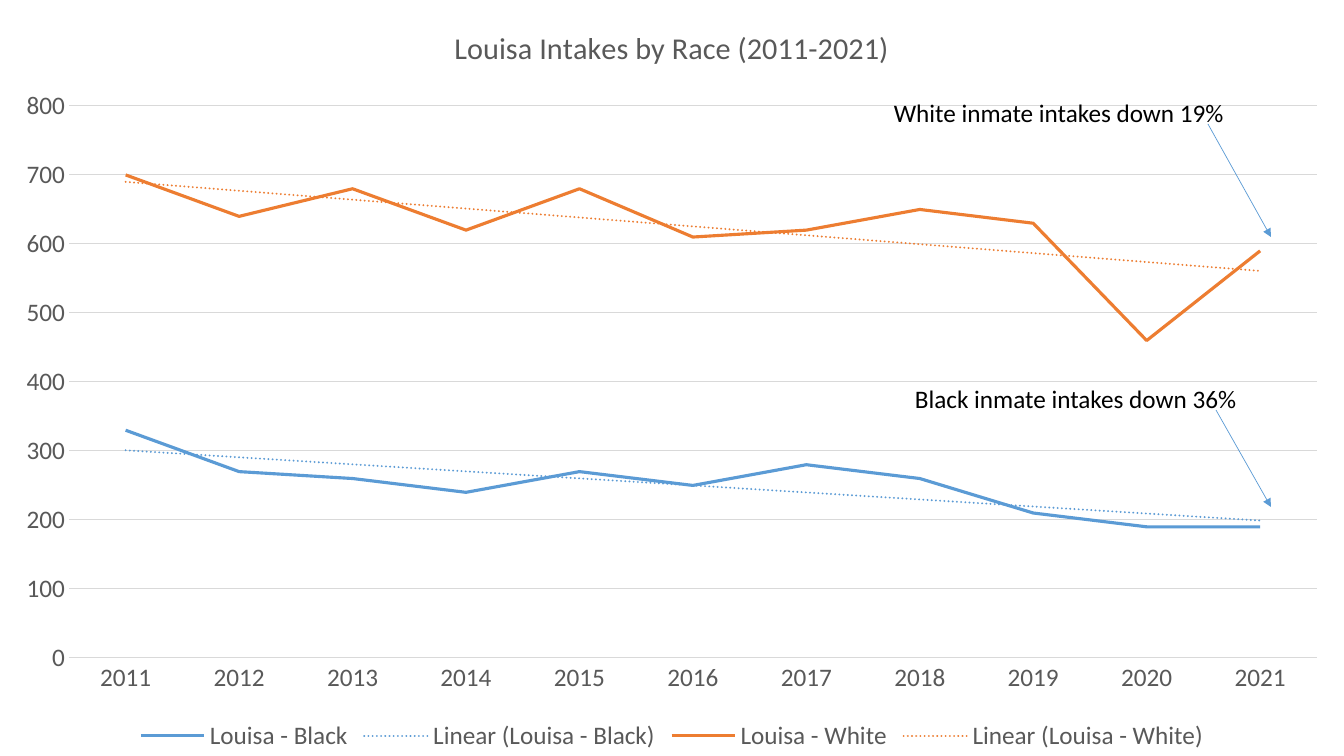
from pptx import Presentation
from pptx.chart.data import CategoryChartData
from pptx.dml.color import RGBColor
from pptx.enum.chart import (XL_CHART_TYPE, XL_LEGEND_POSITION as LEGEND,
                             XL_MARKER_STYLE as MARKER, XL_TICK_MARK as TICK)
from pptx.enum.shapes import MSO_CONNECTOR as CONNECTOR
from pptx.enum.text import MSO_AUTO_SIZE as AUTO_SIZE
from pptx.oxml import parse_xml
from pptx.oxml.ns import nsdecls, qn
from pptx.util import Emu, Pt

PX = 914400 / 100.8
SLIDE = (0, 0, 1344, 756)
PLOT = (69, 106, 1248, 552)
FONT = "Calibri"
COLORS = {"black": "5B9BD5", "white": "ED7D31", "grid": "D9D9D9",
          "label": "595959", "note": "000000"}
YEARS = [str(year) for year in range(2011, 2022)]
INTAKES = {
    "black": ("Louisa - Black",
              (330, 270, 260, 240, 270, 250, 280, 260, 210, 190, 190)),
    "white": ("Louisa - White",
              (700, 640, 680, 620, 680, 610, 620, 650, 630, 460, 590)),
}
# Text, text box, arrow start, arrow end
CALLOUTS = [
    ("White inmate intakes down 19%", (884, 92, 354, 40), (1208, 124), (1271, 237)),
    ("Black inmate intakes down 36%", (905, 378, 346, 40), (1216, 410), (1271, 507)),
]


def px(*lengths):
    return [Emu(round(length * PX)) for length in lengths]


def rgb(name):
    return RGBColor.from_string(COLORS[name])


def style_font(font, color, size=18):
    font.name, font.size, font.bold = FONT, Pt(size), False
    font.color.rgb = rgb(color)


def style_line(line, color, width):
    line.color.rgb = rgb(color)
    line.width = Pt(width)


def place_plot(chart, box, plot):
    """Fix the inner plot area as fractions of the chart's box."""
    fractions = {"x": (plot[0] - box[0]) / box[2], "y": (plot[1] - box[1]) / box[3],
                 "w": plot[2] / box[2], "h": plot[3] / box[3]}
    values = "".join(f'<c:{key} val="{value:.4f}"/>' for key, value in fractions.items())
    area = chart.plots[0]._element.getparent()
    for layout in area.findall(qn("c:layout")):
        area.remove(layout)
    area.insert(0, parse_xml(
        f'<c:layout {nsdecls("c")}><c:manualLayout><c:layoutTarget val="inner"/>'
        f'<c:xMode val="edge"/><c:yMode val="edge"/>{values}'
        '</c:manualLayout></c:layout>'))


def add_trend(series, color):
    series._element.find(qn("c:cat")).addprevious(parse_xml(
        f'<c:trendline {nsdecls("c", "a")}><c:spPr><a:ln w="{Pt(1.5)}" cap="rnd">'
        f'<a:solidFill><a:srgbClr val="{COLORS[color]}"/></a:solidFill>'
        '<a:prstDash val="sysDot"/></a:ln></c:spPr><c:trendlineType val="linear"/>'
        '<c:dispRSqr val="0"/><c:dispEq val="0"/></c:trendline>'))


def style_axes(chart):
    for axis in (chart.category_axis, chart.value_axis):
        axis.major_tick_mark = axis.minor_tick_mark = TICK.NONE
        style_font(axis.tick_labels.font, "label")
    style_line(chart.category_axis.format.line, "grid", 0.75)
    values = chart.value_axis
    values.minimum_scale, values.maximum_scale, values.major_unit = 0, 800, 100
    values.format.line.fill.background()
    style_line(values.major_gridlines.format.line, "grid", 0.75)


def add_intake_chart(slide, box):
    data = CategoryChartData(number_format="General")
    data.categories = YEARS
    for name, values in INTAKES.values():
        data.add_series(name, values)
    chart = slide.shapes.add_chart(XL_CHART_TYPE.LINE, *px(*box), data).chart
    style_font(chart.font, "label")

    title = chart.chart_title.text_frame.paragraphs[0].add_run()
    title.text = "Louisa Intakes by Race (2011-2021)"
    style_font(title.font, "label", 21.6)
    chart.chart_title.include_in_layout = False

    chart.has_legend = True
    chart.legend.position = LEGEND.BOTTOM
    chart.legend.include_in_layout = False
    style_font(chart.legend.font, "label")

    style_axes(chart)
    for color, series in zip(INTAKES, chart.plots[0].series):
        series.smooth = False
        series.marker.style = MARKER.NONE
        style_line(series.format.line, color, 2.25)
        add_trend(series, color)
    chart.plots[0].vary_by_categories = False
    place_plot(chart, box, PLOT)


def add_callout(slide, text, box, start, end):
    frame = slide.shapes.add_textbox(*px(*box)).text_frame
    frame.word_wrap = False
    frame.auto_size = AUTO_SIZE.SHAPE_TO_FIT_TEXT
    span = frame.paragraphs[0].add_run()
    span.text = text
    style_font(span.font, "note")

    arrow = slide.shapes.add_connector(CONNECTOR.STRAIGHT, *px(*start, *end))
    style_line(arrow.line, "black", 0.5)
    arrow.line._get_or_add_ln().append(
        parse_xml(f'<a:tailEnd {nsdecls("a")} type="triangle"/>'))
    arrow._element.spPr.append(parse_xml(f'<a:effectLst {nsdecls("a")}/>'))


def main():
    deck = Presentation()
    deck.slide_width, deck.slide_height = px(*SLIDE[2:])
    blank_layout = deck.slide_layouts[6]
    page = deck.slides.add_slide(blank_layout)
    add_intake_chart(page, SLIDE)
    for callout in CALLOUTS:
        add_callout(page, *callout)
    deck.save("out.pptx")


if __name__ == "__main__":
    main()
